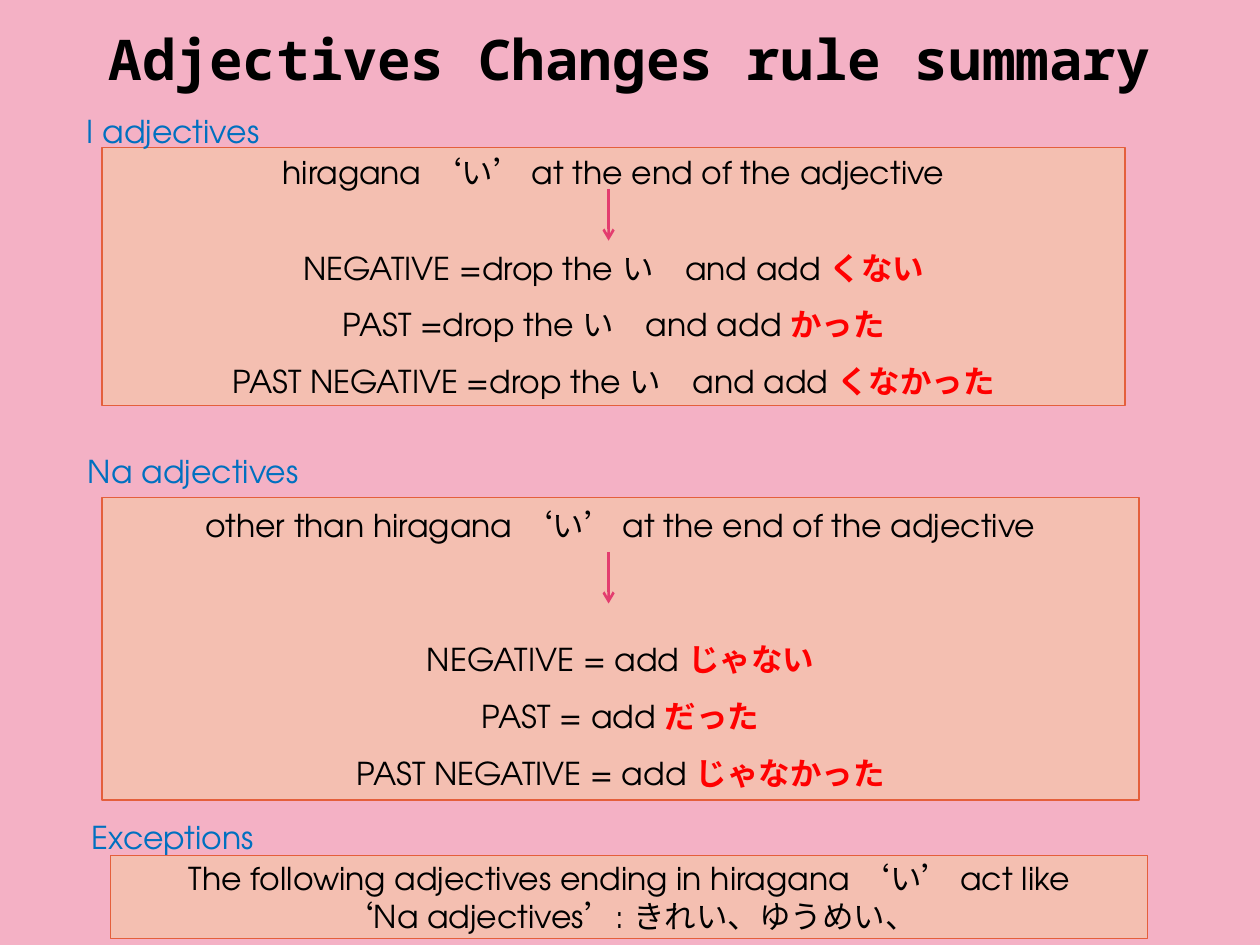
from lxml import etree
from pptx import Presentation
from pptx.dml.color import RGBColor
from pptx.enum import shapes, text
from pptx.oxml.ns import qn
from pptx.util import Inches, Pt

BACKGROUND = RGBColor(0xF4, 0xB1, 0xC5)
PANEL_FILL = RGBColor(0xF4, 0xBF, 0xB1)
PANEL_LINE = RGBColor(0xE4, 0x5F, 0x3C)
ARROW = RGBColor(0xE3, 0x3D, 0x6F)
HEADING = RGBColor(0x00, 0x70, 0xC0)
ENDING = RGBColor(0xFF, 0x00, 0x00)
BLACK = RGBColor(0x00, 0x00, 0x00)

BODY_FONT = "TeX Gyre Adventor"
TITLE_FONT = "Noto Sans Mono"
BLANK_LINE = 22  # height of one body line, in points
ARROW_X = 4.83

I_RULES = [
    ("NEGATIVE =drop the い\u3000and add ", "くない"),
    ("PAST =drop the い\u3000and add ", "かった"),
    ("PAST NEGATIVE =drop the い\u3000and add ", "くなかった"),
]
NA_RULES = [
    ("NEGATIVE = add ", "じゃない"),
    ("PAST = add ", "だった"),
    ("PAST NEGATIVE = add ", "じゃなかった"),
]


def add_run(paragraph, words, color=BLACK, size=18, font=BODY_FONT, bold=False):
    run = paragraph.add_run()
    run.text = words
    run.font.name = font
    run.font.size = Pt(size)
    run.font.bold = bold
    run.font.color.rgb = color


def add_title(slide, words):
    box = slide.shapes.add_textbox(Inches(0.5), 0, Inches(9), Inches(0.92))
    frame = box.text_frame
    frame.word_wrap = True
    frame.vertical_anchor = text.MSO_ANCHOR.MIDDLE
    paragraph = frame.paragraphs[0]
    paragraph.alignment = text.PP_ALIGN.CENTER
    add_run(paragraph, words, size=32, font=TITLE_FONT, bold=True)


def add_heading(slide, words, left, top, width):
    box = slide.shapes.add_textbox(
        Inches(left), Inches(top), Inches(width), Inches(0.4))
    box.text_frame.word_wrap = False
    box.text_frame.auto_size = text.MSO_AUTO_SIZE.SHAPE_TO_FIT_TEXT
    add_run(box.text_frame.paragraphs[0], words, HEADING)


def add_panel(slide, left, top, width, height, lines, rules=(), gap_lines=0):
    """Add a box of plain lines, then rules set apart by a gap of whole lines."""
    panel = slide.shapes.add_shape(
        shapes.MSO_SHAPE.RECTANGLE,
        Inches(left), Inches(top), Inches(width), Inches(height))
    panel.shadow.inherit = False
    panel.fill.solid()
    panel.fill.fore_color.rgb = PANEL_FILL
    panel.line.color.rgb = PANEL_LINE
    panel.line.width = Pt(0.75)

    frame = panel.text_frame
    frame.word_wrap = True
    frame.vertical_anchor = text.MSO_ANCHOR.MIDDLE
    for index, line in enumerate(lines):
        paragraph = frame.add_paragraph() if index else frame.paragraphs[0]
        paragraph.alignment = text.PP_ALIGN.CENTER
        add_run(paragraph, line)
    for index, (rule, ending) in enumerate(rules):
        paragraph = frame.add_paragraph()
        paragraph.alignment = text.PP_ALIGN.CENTER
        paragraph.line_spacing = 1.5
        if index == 0:
            paragraph.space_before = Pt(gap_lines * BLANK_LINE)
        add_run(paragraph, rule)
        add_run(paragraph, ending, ENDING, bold=True)


def add_down_arrow(slide, top):
    arrow = slide.shapes.add_connector(
        shapes.MSO_CONNECTOR.STRAIGHT,
        Inches(ARROW_X), Inches(top), Inches(ARROW_X), Inches(top + 0.41))
    arrow.line.color.rgb = ARROW
    arrow.line.width = Pt(1.5)
    etree.SubElement(arrow.line._get_or_add_ln(), qn("a:tailEnd"), type="arrow")
    etree.SubElement(arrow._element.spPr, qn("a:effectLst"))


def main():
    presentation = Presentation()
    presentation.slide_width = Inches(10)
    presentation.slide_height = Inches(7.5)
    slide = presentation.slides.add_slide(presentation.slide_layouts[6])
    slide.background.fill.solid()
    slide.background.fill.fore_color.rgb = BACKGROUND

    add_panel(slide, 0.81, 1.17, 8.12, 2.05,
              ["hiragana ‘い’ at the end of the adjective"], I_RULES, gap_lines=1)
    add_heading(slide, "I adjectives", 0.59, 0.84, 1.59)
    add_down_arrow(slide, 1.5)

    add_panel(slide, 0.81, 3.95, 8.23, 2.4,
              ["other than hiragana ‘い’ at the end of the adjective"],
              NA_RULES, gap_lines=2)
    add_heading(slide, "Na adjectives", 0.6, 3.54, 1.9)
    add_heading(slide, "Exceptions", 0.63, 6.44, 1.51)
    add_down_arrow(slide, 4.38)

    add_title(slide, "Adjectives Changes rule summary")
    add_panel(slide, 0.88, 6.79, 8.23, 0.66,
              ["The following adjectives ending in hiragana ‘い’ act like",
               "‘Na adjectives’: きれい、ゆうめい、"])

    presentation.save("out.pptx")


if __name__ == "__main__":
    main()
